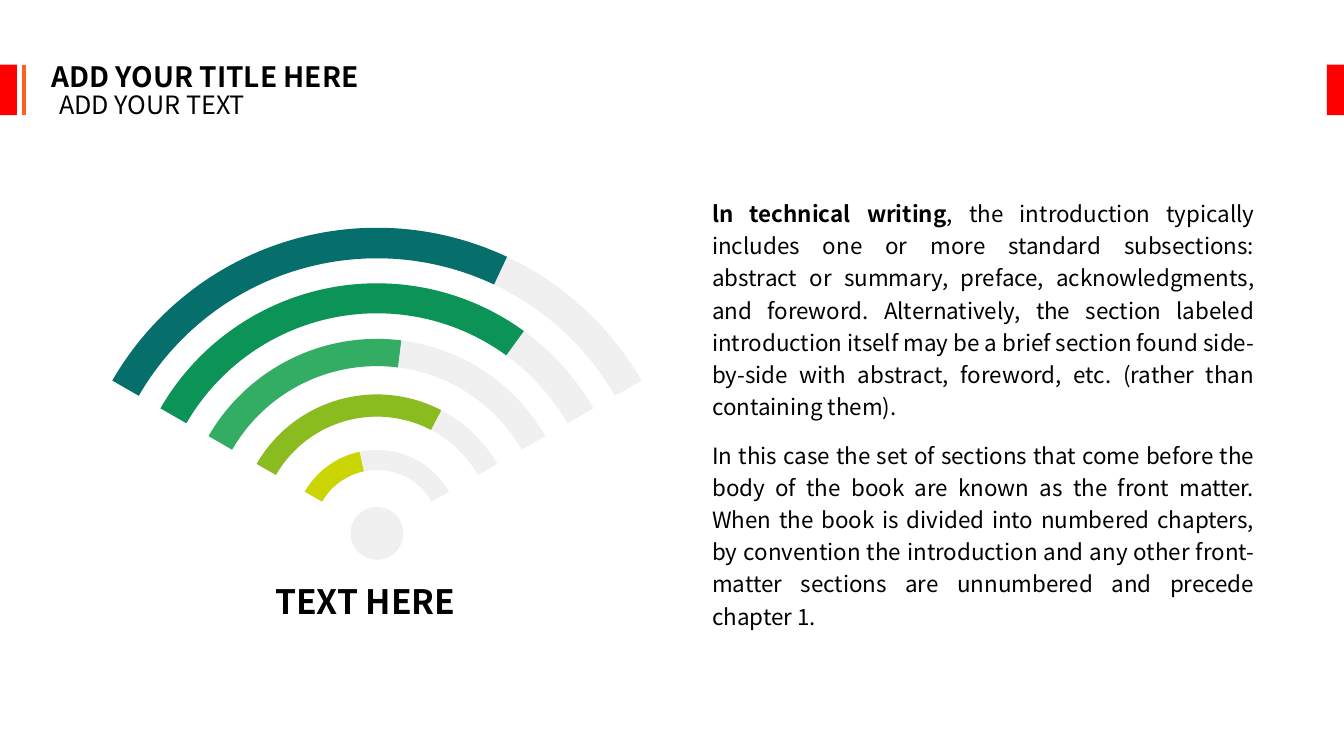
from lxml.etree import SubElement
from pptx import Presentation
from pptx.dml.color import RGBColor
from pptx.enum.shapes import MSO_CONNECTOR, MSO_SHAPE
from pptx.enum.text import MSO_ANCHOR, MSO_AUTO_SIZE, PP_ALIGN
from pptx.oxml.ns import qn
from pptx.util import Cm, Pt

FONT = "Noto Sans CJK SC"
BLACK = RGBColor(0x00, 0x00, 0x00)
GRAY = RGBColor(0xF0, 0xF0, 0xF0)
RED = RGBColor(0xFF, 0x00, 0x00)
ORANGE = RGBColor(0xFC, 0x61, 0x1F)
TEAL = RGBColor(0x06, 0x6F, 0x6B)
GREEN = RGBColor(0x0C, 0x93, 0x58)
LIGHT_GREEN = RGBColor(0x33, 0xAD, 0x64)
LIME = RGBColor(0x8A, 0xBC, 0x1F)
YELLOW = RGBColor(0xCB, 0xD5, 0x04)

presentation = Presentation()
presentation.slide_width = Cm(33.87)
presentation.slide_height = Cm(19.05)
slide = presentation.slides.add_slide(presentation.slide_layouts[6])


def add_filled(preset, left, top, width, height, color):
    shape = slide.shapes.add_shape(preset, Cm(left), Cm(top), Cm(width), Cm(height))
    shape.shadow.inherit = False
    shape.fill.solid()
    shape.fill.fore_color.rgb = color
    shape.line.fill.background()
    return shape


def add_text(box, runs, size, align, wrap=True, line_spacing=None):
    """Add a text box at box (cm); runs is a list of (text, bold)."""
    text_box = slide.shapes.add_textbox(*[Cm(length) for length in box])
    frame = text_box.text_frame
    frame.word_wrap = wrap
    frame.auto_size = MSO_AUTO_SIZE.SHAPE_TO_FIT_TEXT
    paragraph = frame.paragraphs[0]
    paragraph.alignment = align
    paragraph.line_spacing = line_spacing
    for text, bold in runs:
        run = paragraph.add_run()
        run.text = text
        run.font.name = FONT
        run.font.size = Pt(size)
        run.font.bold = bold
        run.font.color.rgb = BLACK
    return frame


# Signal arcs: gray tracks first, then the coloured share of each track
CENTER_X, CENTER_Y = 9.5, 13.44
OUTER_DIAMETER, DIAMETER_STEP = 15.4, 2.8
START_ANGLE, SWEEP = 210, 120
ADJUSTMENT_PER_DEGREE = 0.6  # 60000 units per degree, scaled by 100000
signal_arcs = [  # thickness ratio, filled share, colour
    (0.05, 0.71, TEAL),
    (0.06, 0.80, GREEN),
    (0.07, 0.56, LIGHT_GREEN),
    (0.08, 0.73, LIME),
    (0.12, 0.40, YELLOW),
]
tracks = [(thickness, 1, GRAY) for thickness, share, color in signal_arcs]
for layer in (tracks, signal_arcs):
    for index, (thickness, share, color) in enumerate(layer):
        diameter = OUTER_DIAMETER - index * DIAMETER_STEP
        arc = add_filled(MSO_SHAPE.BLOCK_ARC, CENTER_X - diameter / 2,
                         CENTER_Y - diameter / 2, diameter, diameter, color)
        arc.adjustments[0] = START_ANGLE * ADJUSTMENT_PER_DEGREE
        arc.adjustments[1] = (START_ANGLE + SWEEP * share) * ADJUSTMENT_PER_DEGREE
        arc.adjustments[2] = thickness

# Dot at the centre of the arcs
DOT = 1.33
add_filled(MSO_SHAPE.OVAL, CENTER_X - DOT / 2, CENTER_Y - DOT / 2, DOT, DOT, GRAY)

# Caption under the arcs
caption = add_text((5, 14.76, 8.41, 0.76), [("TEXT HERE", True)], 24, PP_ALIGN.CENTER)
caption.auto_size = MSO_AUTO_SIZE.NONE
caption.vertical_anchor = MSO_ANCHOR.MIDDLE

# Body text
add_text((17.7, 4.78, 14.17, 5.18), [
    ("ln technical writing", True),
    (", the introduction typically includes one or more standard subsections: "
     "abstract or summary, preface, acknowledgments, and foreword. Alternatively, "
     "the section labeled introduction itself may be a brief section found "
     "side-by-side with abstract, foreword, etc. (rather than containing them).", False),
], 16, PP_ALIGN.JUSTIFY, line_spacing=1.2)
add_text((17.7, 10.87, 14.17, 4.37), [
    ("In this case the set of sections that come before the body of the book are "
     "known as the front matter. When the book is divided into numbered chapters, "
     "by convention the introduction and any other front-matter sections are "
     "unnumbered and precede chapter 1.", False),
], 16, PP_ALIGN.JUSTIFY, line_spacing=1.2)

# Header: red edge bars, orange rule, title and subtitle
BAR_TOP, BAR_WIDTH, BAR_HEIGHT = 1.63, 0.43, 1.27
for left in (0, 33.87 - BAR_WIDTH):
    add_filled(MSO_SHAPE.RECTANGLE, left, BAR_TOP, BAR_WIDTH, BAR_HEIGHT, RED)
rule = slide.shapes.add_connector(MSO_CONNECTOR.STRAIGHT, Cm(0.61), Cm(BAR_TOP),
                                  Cm(0.61), Cm(BAR_TOP + BAR_HEIGHT))
rule.line.color.rgb = ORANGE
rule.line.width = Pt(3)
SubElement(rule.element.spPr, qn("a:effectLst"))
add_text((0.84, 1.37, 8.66, 1.12), [("ADD YOUR TITLE HERE", True)], 20,
         PP_ALIGN.CENTER, wrap=False)
add_text((1.24, 2.13, 5.69, 1.02), [("ADD YOUR TEXT", False)], 18,
         PP_ALIGN.LEFT, wrap=False)

presentation.save("out.pptx")
